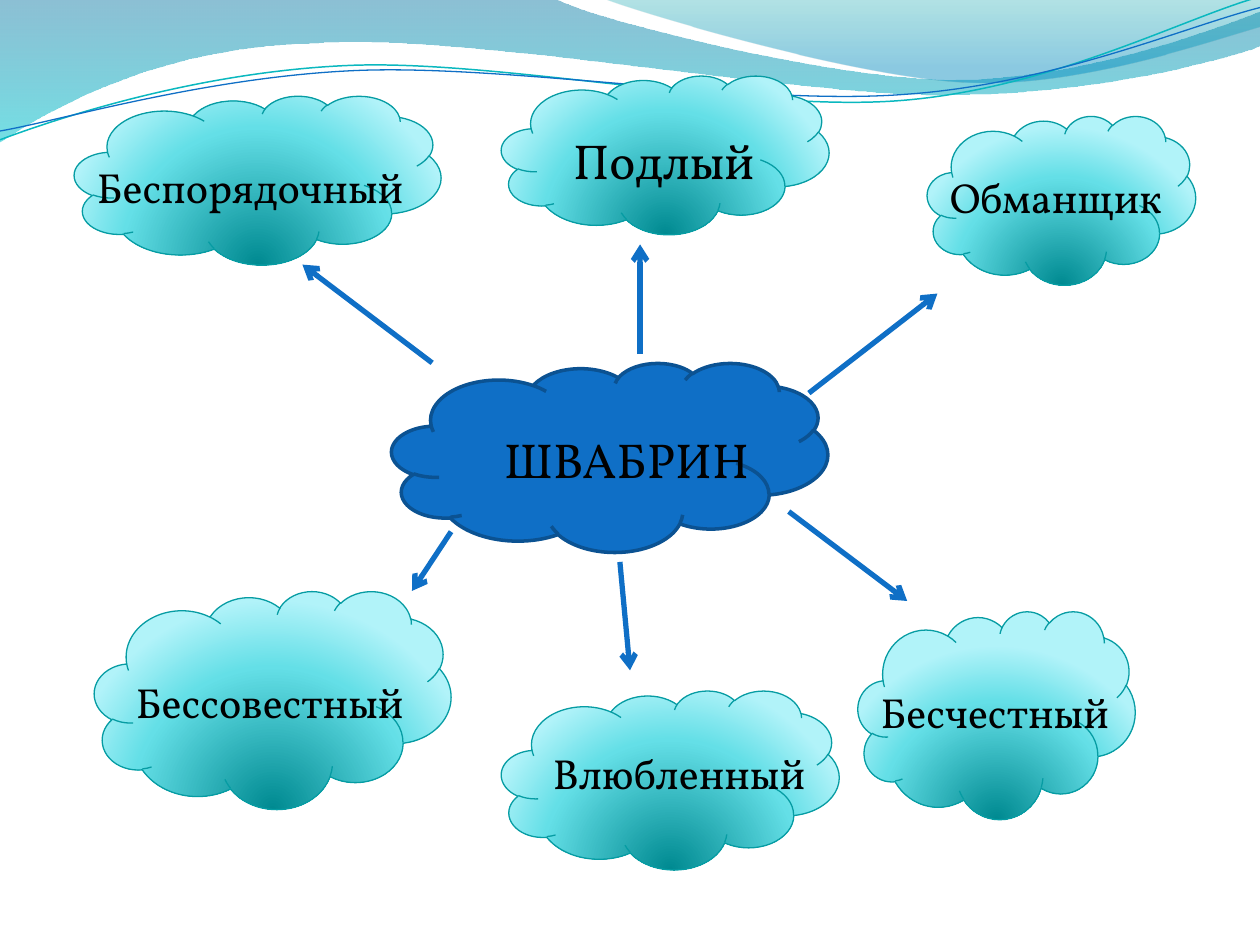
from lxml import etree
from pptx import Presentation
from pptx.dml.color import RGBColor
from pptx.enum import shapes, text
from pptx.oxml import parse_xml
from pptx.oxml.ns import nsdecls, qn
from pptx.util import Inches, Pt

BLACK = RGBColor(0x00, 0x00, 0x00)
BLUE = RGBColor(0x0F, 0x6F, 0xC6)
DARK_BLUE = RGBColor(0x0B, 0x52, 0x92)
TEAL = RGBColor(0x06, 0x9C, 0xA3)
WAVE_TEAL = RGBColor(0x0A, 0xB8, 0xBF)
DEEP_TEAL = RGBColor(0x00, 0x8A, 0x91)
BRIGHT_TEAL = RGBColor(0x64, 0xDF, 0xE7)
PALE_TEAL = RGBColor(0xB1, 0xF3, 0xF9)
BAND_BLUE = RGBColor(0x00, 0x74, 0xA1)
BAND_CYAN = RGBColor(0x00, 0xC6, 0xCF)
CREST_TEAL = RGBColor(0x00, 0xA1, 0xA9)
CREST_BLUE = RGBColor(0x00, 0x8B, 0xBF)

DOWNWARD = '<a:lin ang="5400000" scaled="0"/>'
FROM_BELOW = ('<a:path path="circle"><a:fillToRect l="50000" t="130000" '
              'r="50000" b="-30000"/></a:path>')
CLOUD_STOPS = [(0, DEEP_TEAL, 100), (68, BRIGHT_TEAL, 100), (100, PALE_TEAL, 100)]

BANDS = [
    ([(0, 0), (4.4, -0.01), (4.76, 0.17, 6.64, 0.63, 7.58, 0.63),
      (8.53, 0.63, 9.58, 0.26, 10, 0.09), (10.01, 0.36),
      (9.83, 0.44, 8.7, 0.76, 7.46, 0.75), (6.22, 0.75, 3.82, 0.28, 2.57, 0.34),
      (1.29, 0.36, 0.46, 0.83, -0.01, 1.13), (0, 0)],
     [(0, BAND_BLUE, 45), (100, BAND_CYAN, 55)]),
    ([(4.79, -0.01), (5.09, 0.11, 6.82, 0.62, 7.69, 0.65),
      (8.56, 0.69, 9.61, 0.32, 10, 0.21), (10, 0), (4.79, -0.01)],
     [(0, CREST_TEAL, 30), (80, CREST_BLUE, 45)]),
]
WAVES = [
    ([(0, 1.11), (0.48, 0.93, 1.58, 0.57, 2.77, 0.52),
      (3.95, 0.47, 5.93, 0.89, 7.13, 0.8), (8.33, 0.71, 9.38, 0.15, 9.98, -0.02)],
     WAVE_TEAL, 0.85),
    ([(0, 1.04), (0.47, 0.96, 1.64, 0.61, 2.83, 0.56),
      (4.03, 0.51, 5.97, 0.84, 7.17, 0.75), (8.36, 0.67, 9.41, 0.21, 10, 0.06)],
     BLUE, 0.75),
]
HERO = ("ШВАБРИН", 28, (3.11, 2.88, 3.46, 1.5), (0.79, 0.48, 2.2, 0.57))
TRAITS = [
    ("Обманщик", 24, (7.36, 0.92, 2.13, 1.34), (0.08, 0.39, 1.97, 0.5)),
    ("Бесчестный", 24, (6.81, 4.85, 2.2, 1.65), (0.08, 0.55, 2.05, 0.5)),
    ("Бессовестный", 24, (0.75, 4.69, 2.83, 1.73), (0.23, 0.63, 2.36, 0.5)),
    ("Беспорядочный", 24, (0.59, 0.76, 2.91, 1.34), (0.08, 0.47, 2.68, 0.5)),
    ("Подлый", 28, (3.98, 0.6, 2.6, 1.26), (0.47, 0.39, 1.81, 0.57)),
    ("Влюбленный", 24, (3.98, 5.48, 2.68, 1.42), (0.31, 0.4, 2.2, 0.5)),
]
ARROWS = [
    (6.42, 3.12, 7.44, 2.33), (3.58, 4.22, 3.27, 4.69), (6.26, 4.06, 7.2, 4.77),
    (3.43, 2.88, 2.4, 2.1), (5.08, 2.81, 5.08, 1.94), (4.92, 4.46, 5, 5.32),
]


def set_format(target, values):
    for name, value in values.items():
        setattr(target, name, value)


def set_line(shape, color, width):
    shape.line.color.rgb = color
    shape.line.width = Pt(width)


def set_gradient(shape, stops, direction):
    shape.fill.background()
    stop_xml = "".join(
        f'<a:gs pos="{position * 1000}"><a:srgbClr val="{color}">'
        f'<a:alpha val="{opacity * 1000}"/></a:srgbClr></a:gs>'
        for position, color, opacity in stops)
    gradient = parse_xml(f'<a:gradFill {nsdecls("a")} rotWithShape="1">'
                         f'<a:gsLst>{stop_xml}</a:gsLst>{direction}</a:gradFill>')
    properties = shape.fill._xPr
    properties.replace(properties.find(qn("a:noFill")), gradient)


def bend(outline, segments, left, top):
    edges = list(outline._element.iter(qn("a:lnTo")))
    for edge, segment in zip(edges, segments[1:]):
        if len(segment) == 2:
            continue
        curve = etree.Element(qn("a:cubicBezTo"))
        for x, y in zip(segment[::2], segment[1::2]):
            etree.SubElement(curve, qn("a:pt"),
                             x=str(Inches(left + x) - outline.left),
                             y=str(Inches(top + y) - outline.top))
        edge.getparent().replace(edge, curve)


def add_outline(page, segments, left, top, close):
    anchors = [(Inches(left + segment[-2]), Inches(top + segment[-1]))
               for segment in segments]
    builder = page.shapes.build_freeform(*anchors[0], scale=1.0)
    builder.add_line_segments(anchors[1:], close=close)
    outline = builder.convert_to_shape()
    outline.shadow.inherit = False
    bend(outline, segments, left, top)
    return outline


def add_header(page, left, top):
    for segments, stops in BANDS:
        band = add_outline(page, segments, left, top, True)
        set_gradient(band, stops, DOWNWARD)
        band.line.fill.background()
    for segments, color, width in WAVES:
        wave = add_outline(page, segments, left, top, False)
        wave.fill.background()
        set_line(wave, color, width)


def add_cloud(page, label, size, box, label_box):
    cloud = page.shapes.add_shape(shapes.MSO_SHAPE.CLOUD, *map(Inches, box))
    cloud.shadow.inherit = False
    left, top, width, height = label_box
    caption = page.shapes.add_textbox(Inches(box[0] + left), Inches(box[1] + top),
                                      Inches(width), Inches(height))
    set_format(caption.text_frame, {
        "word_wrap": True, "auto_size": text.MSO_AUTO_SIZE.SHAPE_TO_FIT_TEXT})
    span = caption.text_frame.paragraphs[0].add_run()
    span.text = label
    set_format(span.font, {"name": "Vollkorn", "size": Pt(size)})
    span.font.color.rgb = BLACK
    return cloud


def add_hero(page, hero):
    cloud = add_cloud(page, *hero)
    cloud.fill.solid()
    cloud.fill.fore_color.rgb = BLUE
    set_line(cloud, DARK_BLUE, 2)


def add_trait(page, trait):
    cloud = add_cloud(page, *trait)
    set_gradient(cloud, CLOUD_STOPS, FROM_BELOW)
    set_line(cloud, TEAL, 0.75)


def add_arrow(page, ends):
    arrow = page.shapes.add_connector(shapes.MSO_CONNECTOR.STRAIGHT, *map(Inches, ends))
    set_line(arrow, BLUE, 3)
    etree.SubElement(arrow.line._get_or_add_ln(), qn("a:tailEnd"), type="arrow")
    etree.SubElement(arrow._element.spPr, qn("a:effectLst"))


def main():
    deck = Presentation()
    set_format(deck, {"slide_width": Inches(10), "slide_height": Inches(7.5)})
    page = deck.slides.add_slide(deck.slide_layouts[6])
    add_header(page, 0, 0)
    add_hero(page, HERO)
    for trait in TRAITS:
        add_trait(page, trait)
    for ends in ARROWS:
        add_arrow(page, ends)
    deck.save("out.pptx")


if __name__ == "__main__":
    main()
